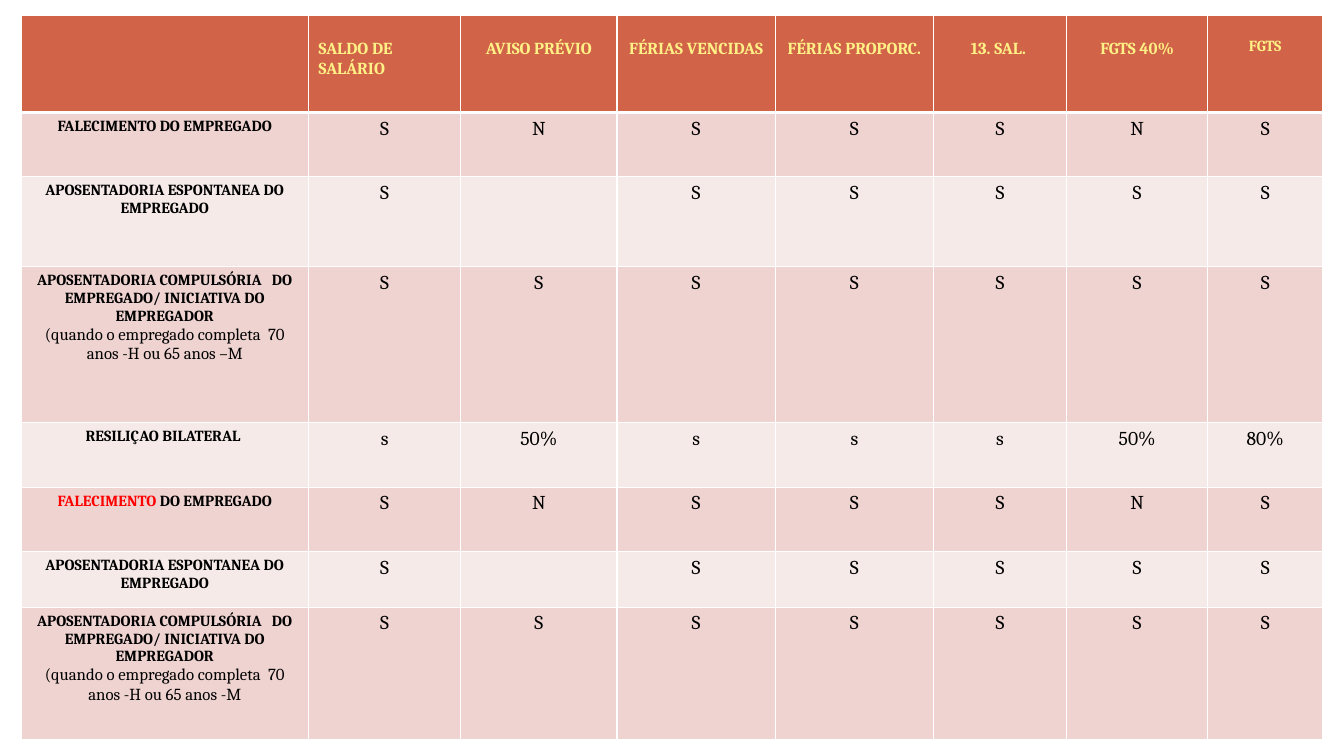
from lxml.etree import SubElement
from pptx import Presentation
from pptx.dml.color import RGBColor
from pptx.enum.shapes import MSO_SHAPE
from pptx.enum.text import PP_ALIGN
from pptx.oxml.ns import qn
from pptx.util import Inches, Pt

WIDE, HIGH = 1333, 750
EDGES = [(0, 733, WIDE, 17), (0, 0, WIDE, 152),
         (0, 0, 22, HIGH), (1311, 0, 22, HIGH)]
COLS = [285, 151, 155, 157, 157, 132, 140, 114]
ROWS = [96, 64, 89, 155, 64, 64, 55, 131]
HEADS = ["SALDO DE SALÁRIO", "AVISO PRÉVIO", "FÉRIAS VENCIDAS",
         "FÉRIAS PROPORC.", "13. SAL. ", "FGTS 40%", "FGTS"]
DEATH = "S N S S S N S".split()
EARLY = ["S", "", "S", "S", "S", "S", "S"]
FORCED = ["S"] * 7
DEAL = "s 50% s s s 50% 80%".split()


def color(code):
    """Turn a hex string into a colour."""
    return RGBColor.from_string(code)


def bold(text, ink="000000"):
    """Describe a run of a row label."""
    return text, 11, ink, True


def forced(mark):
    """Give the two paragraphs of the compulsory retirement label."""
    note = f"(quando o empregado completa  70 anos -H ou 65 anos {mark}M"
    return [[bold("APOSENTADORIA COMPULSÓRIA   DO EMPREGADO/ "
                  "INICIATIVA DO EMPREGADOR")],
            [(note, 12, "000000", False)]]


RETIRE = [[bold("APOSENTADORIA ESPONTANEA DO EMPREGADO")]]
BODY = [
    ([[bold("FALECIMENTO DO EMPREGADO")]], DEATH),
    (RETIRE, EARLY),
    (forced("–"), FORCED),
    ([[bold("RESILIÇAO BILATERAL ")]], DEAL),
    ([[bold("FALECIMENTO", "FF0000"), bold(" DO EMPREGADO")]], DEATH),
    (RETIRE, EARLY),
    (forced("-"), FORCED),
]


class Deck:
    """Hold the style, the grid and the current slide."""

    font = "Cambria"
    back, head, gold, rule = "C5D1D7", "D16349", "FFF185", "FFFFFF"
    bands = ["EED3D0", "F5EAE8"]

    def __init__(self):
        """Open a plain slide on a grid of hundredths of an inch."""
        self.show = Presentation()
        self.show.slide_width = self.span(WIDE)
        self.show.slide_height = self.span(HIGH)
        self.slide = self.show.slides.add_slide(self.show.slide_layouts[6])
        fill = self.slide.background.fill
        fill.solid()
        fill.fore_color.rgb = color(self.back)

    def span(self, steps):
        """Measure a number of grid steps."""
        return Inches(steps / 100)

    def edge(self, *box):
        """Add a white bar along one side of the slide."""
        bar = self.slide.shapes.add_shape(
            MSO_SHAPE.RECTANGLE, *map(self.span, box))
        bar.shadow.inherit = False
        bar.fill.solid()
        bar.fill.fore_color.rgb = color(self.rule)
        bar.line.fill.background()

    def table(self, left, top, cols, rows):
        """Add a table with the given column and row steps."""
        grid = self.slide.shapes.add_table(
            len(rows), len(cols), self.span(left), self.span(top),
            self.span(sum(cols)), self.span(sum(rows))).table
        for col, size in zip(grid.columns, cols):
            col.width = self.span(size)
        for row, size in zip(grid.rows, rows):
            row.height = self.span(size)
        return grid

    def cell(self, cell, fill, paras, upper=1, lower=1,
             align=PP_ALIGN.CENTER, inset=5):
        """Fill, frame and write one cell."""
        props = cell._tc.get_or_add_tcPr()
        for side, width in zip("LRTB", (1, 1, upper, lower)):
            line = SubElement(props, qn(f"a:ln{side}"), w=str(Pt(width)))
            paint = SubElement(line, qn("a:solidFill"))
            SubElement(paint, qn("a:srgbClr"), val=self.rule)
        cell.fill.solid()
        cell.fill.fore_color.rgb = color(fill)
        cell.margin_top = self.span(inset)
        frame = cell.text_frame
        for num, runs in enumerate(paras):
            para = frame.add_paragraph() if num else frame.paragraphs[0]
            para.alignment = align
            for text, size, ink, heavy in runs:
                run = para.add_run()
                run.text = text
                run.font.name = self.font
                run.font.size = Pt(size)
                run.font.bold = heavy
                run.font.color.rgb = color(ink)

    def header(self, grid, heads):
        """Write the header row."""
        self.cell(grid.cell(0, 0), self.head, [], lower=3)
        for col, text in enumerate(heads, 1):
            size = 11 if col == len(heads) else 12
            side = PP_ALIGN.LEFT if col == 1 else PP_ALIGN.CENTER
            self.cell(grid.cell(0, col), self.head,
                      [[(text, size, self.gold, True)]],
                      lower=3, align=side, inset=2 * size)

    def body(self, grid, rows):
        """Write the banded rows below the header."""
        for row, (label, marks) in enumerate(rows, 1):
            fill = self.bands[(row - 1) % 2]
            upper = 3 if row == 1 else 1
            self.cell(grid.cell(row, 0), fill, label, upper)
            for col, mark in enumerate(marks, 1):
                paras = [[(mark, 14, "000000", False)]] if mark else []
                self.cell(grid.cell(row, col), fill, paras, upper)


def main():
    """Build and save the slide."""
    deck = Deck()
    for box in EDGES:
        deck.edge(*box)
    grid = deck.table(21, 15.5, COLS, ROWS)
    deck.header(grid, HEADS)
    deck.body(grid, BODY)
    deck.show.save("out.pptx")


if __name__ == "__main__":
    main()
